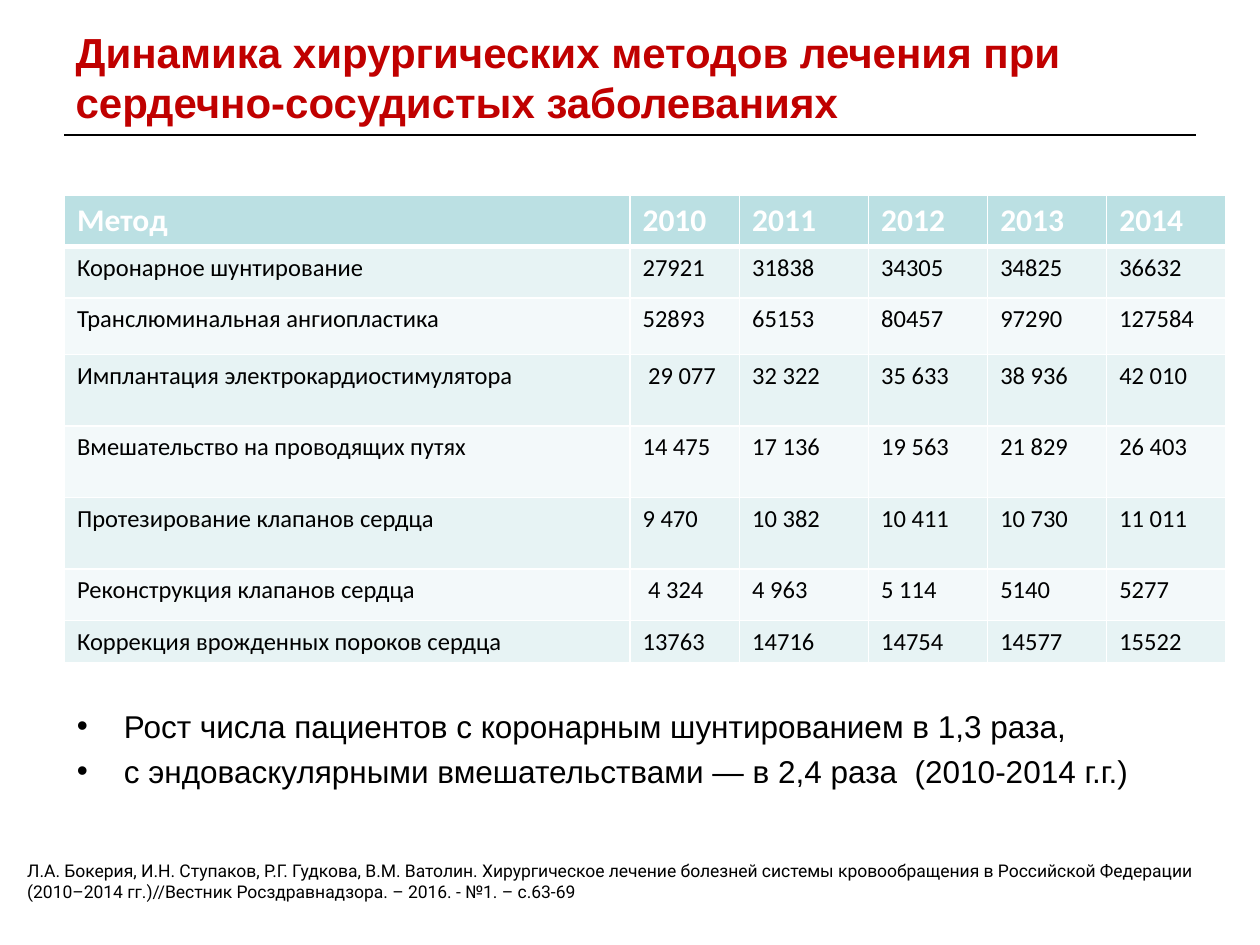
"""Build a slide on the trend of surgical methods in heart disease."""
from dataclasses import dataclass

from lxml.etree import SubElement
from pptx import Presentation
from pptx.dml.color import RGBColor
from pptx.enum.shapes import MSO_CONNECTOR as Link
from pptx.enum.text import MSO_ANCHOR as Anchor, MSO_AUTO_SIZE as Auto, PP_ALIGN as Align
from pptx.oxml import parse_xml
from pptx.oxml.ns import nsdecls, qn
from pptx.util import Cm, Pt

RED = RGBColor(0xC0, 0x00, 0x00)
BLACK = RGBColor(0x00, 0x00, 0x00)
WHITE = RGBColor(0xFF, 0xFF, 0xFF)
TEAL = RGBColor(0xBB, 0xE0, 0xE3)
BANDS = (RGBColor(0xF3, 0xF9, 0xFA), RGBColor(0xE7, 0xF3, 0xF4))

TITLE = "Динамика хирургических методов лечения при сердечно-сосудистых заболеваниях"
POINTS = [
    "Рост числа пациентов с коронарным шунтированием в 1,3 раза,",
    "с эндоваскулярными вмешательствами — в 2,4 раза  (2010-2014 г.г.)",
]
SOURCE = (
    "Л.А. Бокерия, И.Н. Ступаков, Р.Г. Гудкова, В.М. Ватолин. "
    "Хирургическое лечение болезней системы кровообращения в Российской "
    "Федерации (2010–2014 гг.)//Вестник Росздравнадзора. – 2016. - №1. – с.63-69"
)


@dataclass
class Row:
    high: float
    cells: tuple


WIDTHS = (11.4, 2.21, 2.6, 2.4, 2.4, 2.4)
ROWS = [
    Row(1.04, ("Метод", "2010", "2011", "2012", "2013", "2014")),
    Row(1.04, ("Коронарное шунтирование", "27921", "31838", "34305", "34825", "36632")),
    Row(1.14, ("Транслюминальная ангиопластика", "52893", "65153", "80457", "97290", "127584")),
    Row(1.44, ("Имплантация электрокардиостимулятора", " 29 077", "32 322", "35 633", "38 936", "42 010")),
    Row(1.44, ("Вмешательство на проводящих путях", "14 475", "17 136", "19 563", "21 829", "26 403")),
    Row(1.44, ("Протезирование клапанов сердца", "9 470", "10 382", "10 411", "10 730", "11 011")),
    Row(1.04, ("Реконструкция клапанов сердца", " 4 324", "4 963", "5 114", "5140", "5277")),
    Row(0.84, ("Коррекция врожденных пороков сердца", "13763", "14716", "14754", "14577", "15522")),
]


def write(frame, *lines: str, size: float, face: str = "Arial", color: RGBColor = BLACK,
          bold: bool = False, bullet: bool = False, gap: float = 0) -> None:
    """Fill a text frame with formatted paragraphs."""
    frame.word_wrap = True
    for i, line in enumerate(lines):
        para = frame.paragraphs[0] if i == 0 else frame.add_paragraph()
        para.alignment = Align.LEFT
        if bullet:
            props = para._p.get_or_add_pPr()
            props.set("marL", str(Cm(0.95)))
            props.set("indent", str(-Cm(0.95)))
            SubElement(props, qn("a:buFont")).set("typeface", "Arial")
            SubElement(props, qn("a:buChar")).set("char", "•")
        if i:
            para.space_before = Pt(gap)
        run = para.add_run()
        run.text = line
        font = run.font
        font.size, font.name, font.bold = Pt(size), face, bold
        font.color.rgb = color


def place(shape, left: float, top: float, width: float, height: float) -> None:
    """Set the position and size of a shape in centimetres."""
    shape.left, shape.top = Cm(left), Cm(top)
    shape.width, shape.height = Cm(width), Cm(height)


def edge(cell, side: str, width: float) -> None:
    """Add a white border to one side of a cell."""
    cell._tc.get_or_add_tcPr().append(parse_xml(
        f'<a:ln{side} {nsdecls("a")} w="{Pt(width)}"><a:solidFill>'
        f'<a:srgbClr val="{WHITE}"/></a:solidFill></a:ln{side}>'))


def draw_table(slide) -> None:
    """Draw the table of methods by year."""
    frame = slide.shapes.add_table(
        len(ROWS), len(WIDTHS), Cm(1.3), Cm(3.93),
        Cm(sum(WIDTHS)), Cm(sum(row.high for row in ROWS)))
    table = frame.table
    for col, width in zip(table.columns, WIDTHS):
        col.width = Cm(width)
    for r, row in enumerate(ROWS):
        head = r == 0
        table.rows[r].height = Cm(row.high)
        for c, text in enumerate(row.cells):
            cell = table.cell(r, c)
            for side in "LRTB":
                thick = (head and side == "B") or (r == 1 and side == "T")
                edge(cell, side, 3 if thick else 1)
            cell.fill.solid()
            cell.fill.fore_color.rgb = TEAL if head else BANDS[r % 2]
            write(cell.text_frame, text, size=18 if head else 14, face="Calibri",
                  color=WHITE if head else BLACK, bold=head)


def add_text(slide, box: tuple, *lines: str, **style) -> None:
    """Add a text box with formatted lines."""
    shape = slide.shapes.add_textbox(*(Cm(n) for n in box))
    write(shape.text_frame, *lines, **style)


def main() -> None:
    """Build and save the slide."""
    deck = Presentation()
    deck.slide_width, deck.slide_height = Cm(25.4), Cm(19.05)
    slide = deck.slides.add_slide(deck.slide_layouts[5])

    rule = slide.shapes.add_connector(Link.STRAIGHT, Cm(1.3), Cm(2.72), Cm(24.1), Cm(2.72))
    rule.line.color.rgb = BLACK
    rule.line.width = Pt(1.5)
    SubElement(rule._element.spPr, qn("a:effectLst"))

    title = slide.shapes.title
    place(title, 1.27, 0.77, 22.86, 1.55)
    title.text_frame.auto_size = Auto.NONE
    title.text_frame.vertical_anchor = Anchor.MIDDLE
    write(title.text_frame, TITLE, size=24, color=RED, bold=True)

    add_text(slide, (0.3, 17.22, 24.4, 1.12), SOURCE, size=10, face="Roboto")
    draw_table(slide)
    add_text(slide, (1.3, 14.13, 23, 1.95), *POINTS, size=18, bullet=True, gap=4)
    deck.save("out.pptx")


if __name__ == "__main__":
    main()
